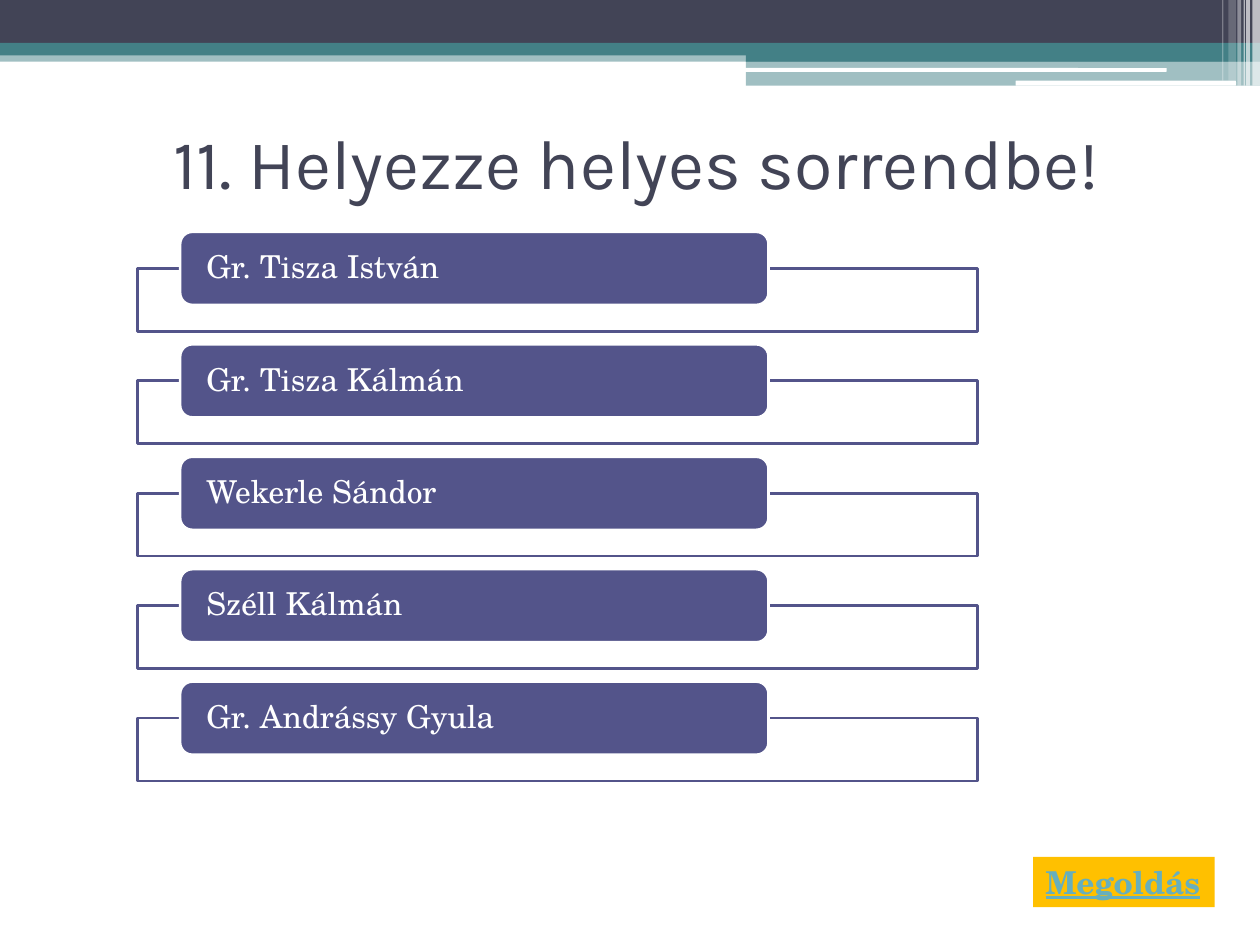
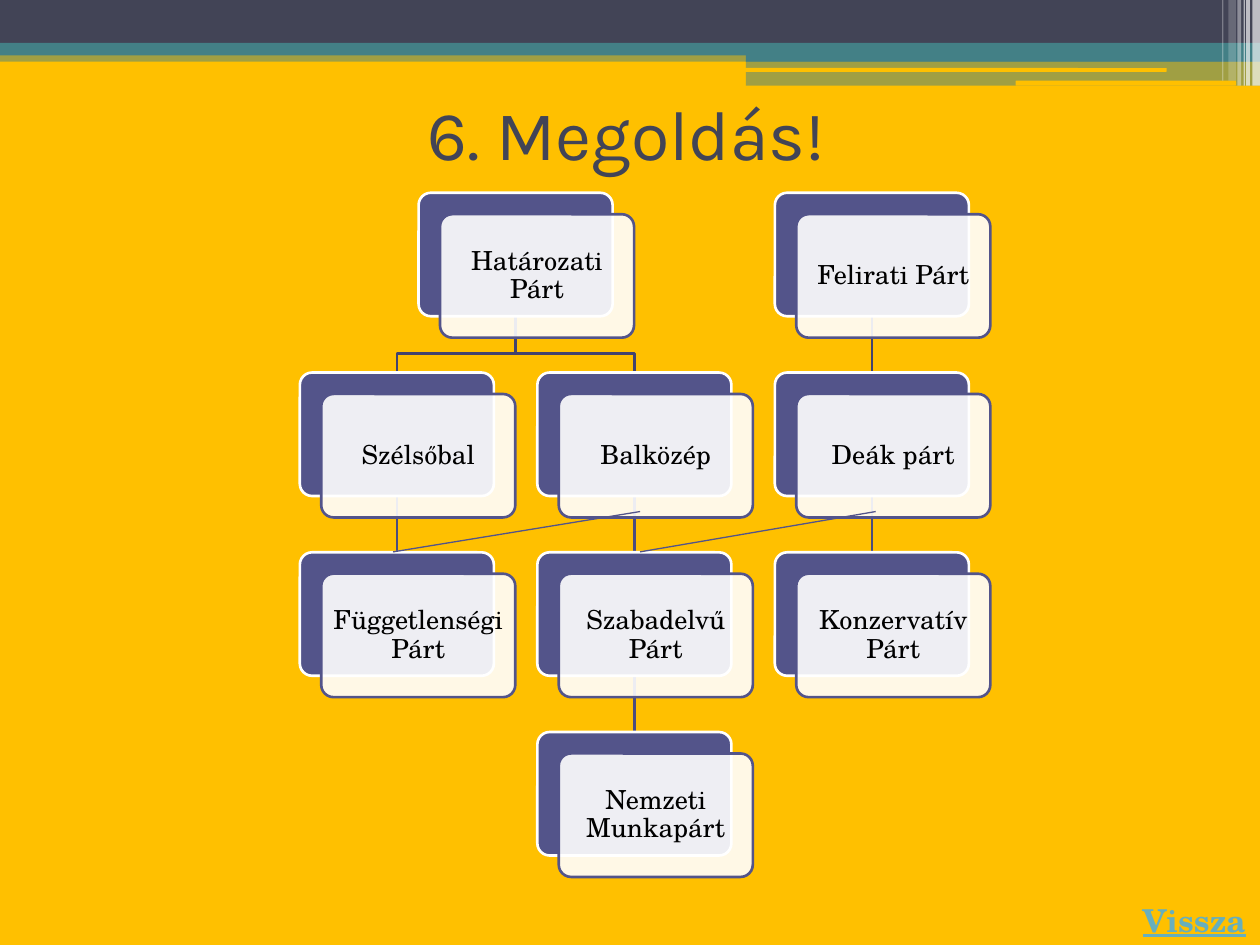
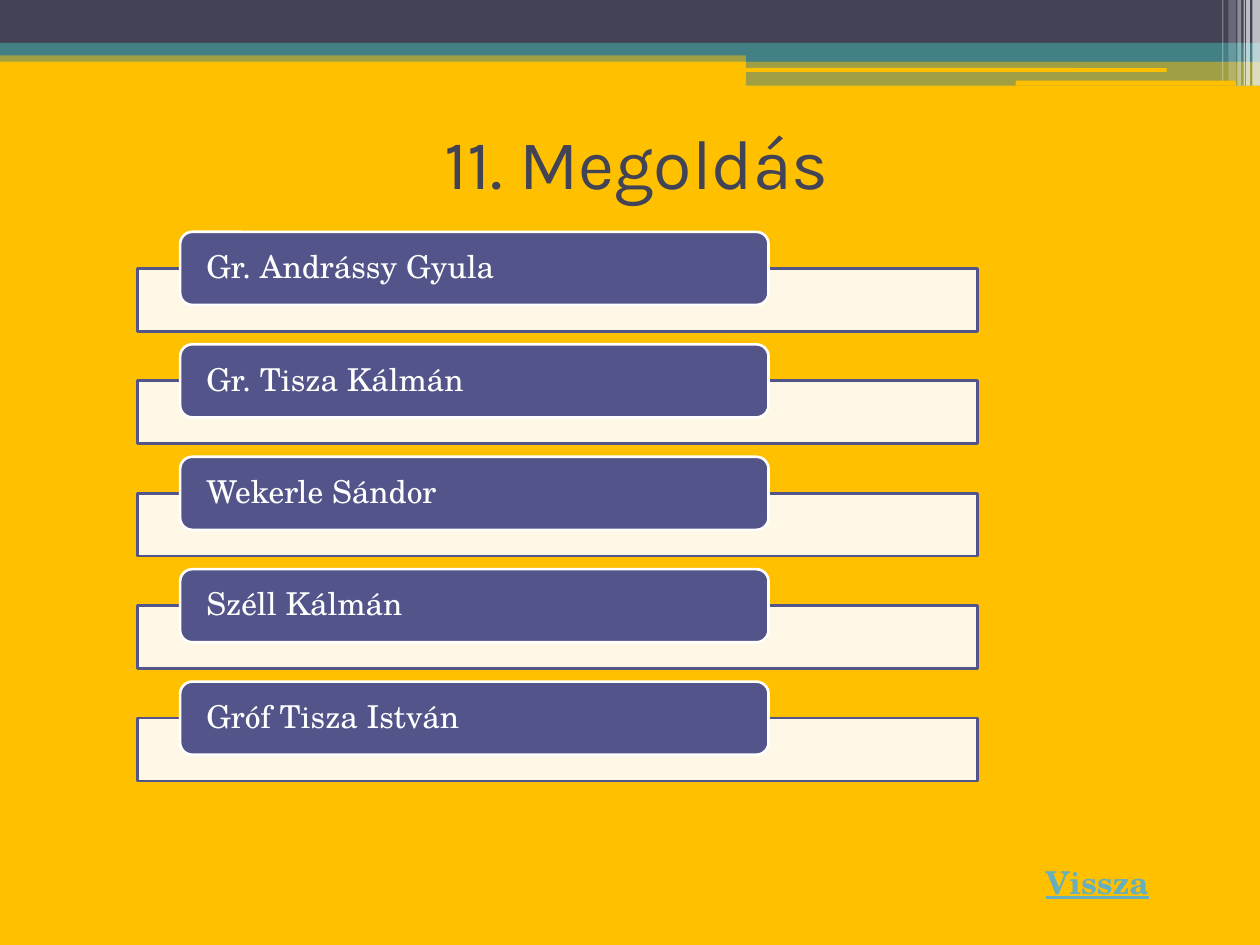
from lxml.etree import SubElement
from pptx import Presentation
from pptx.dml.color import RGBColor
from pptx.enum.shapes import MSO_CONNECTOR as Link, MSO_SHAPE as Preset
from pptx.enum.text import MSO_ANCHOR as Anchor, PP_ALIGN as Align
from pptx.oxml.ns import qn
from pptx.util import Inches, Pt

COLORS = {
    "white": "FFFFFF", "black": "000000", "gold": "FFC000", "slate": "424456",
    "teal": "438086", "indigo": "53548A", "link": "67AFBD",
    "upper branch": "42436F", "lower branch": "4B4C7D",
}
TITLE_FONT, BODY_FONT = "Karla", "TeX Gyre Schola"
COLUMNS, ROWS = 10, 7.5

# left, top, width, height, colour (None is the background), opacity in percent
BANDS = [
    (0, 0.4, 10, 0.09, "teal", 50),
    (0, 0, 10, 0.34, "slate", 100),
    (0, 0.34, 10, 0.1, "teal", 100),
    (5.92, 0.39, 4.08, 0.1, "teal", 100),
    (5.92, 0.48, 4.08, 0.2, "teal", 50),
    (5.91, 0.54, 3.35, 0.03, None, 100),
    (8.06, 0.64, 1.75, 0.04, None, 100),
]
# left, width, height, opacity of the white stripes in the corner
STRIPES = [
    (9.94, 0.06, 0.68, 65), (9.89, 0.03, 0.68, 65), (9.87, 0.01, 0.68, 60),
    (9.82, 0.03, 0.68, 40), (9.75, 0.06, 0.64, 20), (9.7, 0.01, 0.64, 30),
]

LIST_TOP, LIST_PITCH = 1.84, (5.41 - 1.84) / 4
CARD_WIDTH, CARD_HEIGHT, CARD_SHIFT = 1.54, 0.98, 0.17
TREE_LEFT, TREE_TOP = 2.38, 1.53
TREE_COLUMN, TREE_ROW = (6.15 - 2.38) / 2, (5.81 - 1.53) / 3

# party: (tree column, tree row)
PARTIES = {
    "Határozati Párt": (0.5, 0), "Szélsőbal": (0, 1),
    "Függetlenségi Párt": (0, 2), "Balközép": (1, 1),
    "Szabadelvű Párt": (1, 2), "Nemzeti Munkapárt": (1, 3),
    "Felirati Párt": (2, 0), "Deák párt": (2, 1), "Konzervatív Párt": (2, 2),
}
SUCCESSIONS = [
    ("Deák párt", "Konzervatív Párt"), ("Felirati Párt", "Deák párt"),
    ("Szabadelvű Párt", "Nemzeti Munkapárt"), ("Balközép", "Szabadelvű Párt"),
    ("Határozati Párt", "Balközép"), ("Szélsőbal", "Függetlenségi Párt"),
    ("Határozati Párt", "Szélsőbal"),
]
MERGERS = [((6.95, 4.06), (5.08, 4.38)), ((5.08, 4.06), (3.12, 4.38))]


def rgb(name):
    return RGBColor.from_string(COLORS[name])


class Painter:
    """Draws on the current page; lengths are columns and rows of the grid."""

    def __init__(self):
        self.deck = Presentation()
        self.deck.slide_width, self.deck.slide_height = Inches(10), Inches(7.5)
        self.page = None

    def x(self, columns):
        return round(self.deck.slide_width * columns / COLUMNS)

    def y(self, rows):
        return round(self.deck.slide_height * rows / ROWS)

    def frame(self, left, top, width, height):
        return self.x(left), self.y(top), self.x(width), self.y(height)

    def new_page(self, background):
        self.page = self.deck.slides.add_slide(self.deck.slide_layouts[6])
        self.page.background.fill.solid()
        self.page.background.fill.fore_color.rgb = rgb(background)
        for *place, color, opacity in BANDS:
            preset = Preset.RECTANGLE if color else Preset.ROUNDED_RECTANGLE
            self.box(place, color or background, opacity, preset=preset)
        for left, width, height, opacity in STRIPES:
            self.box((left, 0, width, height), "white", opacity)

    def box(self, place, fill, opacity=100, line=None, preset=Preset.RECTANGLE):
        box = self.page.shapes.add_shape(preset, *self.frame(*place))
        box.shadow.inherit = False
        box.fill.solid()
        box.fill.fore_color.rgb = rgb(fill)
        if opacity < 100:
            color = box.fill._xPr.find(f".//{qn('a:srgbClr')}")
            SubElement(color, qn("a:alpha"), val=str(opacity * 1000))
        if line:
            self.stroke(box, line)
        else:
            box.line.fill.background()
        return box

    def stroke(self, shape, color, width=1.5):
        shape.line.color.rgb = rgb(color)
        shape.line.width = Pt(width)

    def put_text(self, box, text, size, color, font=BODY_FONT, align=Align.LEFT,
                 anchor=Anchor.MIDDLE, insets=(0.1, 0.05), wrap=True, spacing=None):
        frame = box.text_frame
        frame.word_wrap, frame.vertical_anchor = wrap, anchor
        frame.margin_left = frame.margin_right = self.x(insets[0])
        frame.margin_top = frame.margin_bottom = self.y(insets[1])
        para = frame.paragraphs[0]
        para.text, para.alignment, para.line_spacing = text, align, spacing
        para.font.name, para.font.size = font, Pt(size)
        para.font.color.rgb = rgb(color)
        return para

    def title(self, text, left=0.55, top=0.7):
        box = self.page.shapes.add_textbox(*self.frame(left, top, 9, 1.17))
        self.put_text(box, text, 40, "slate", TITLE_FONT, Align.CENTER)

    def jump_label(self, text, left, top, width, fill=None):
        """Underlined label in the lower right corner."""
        place = (left, top, width, 0.4)
        if fill:
            box = self.box(place, fill)
        else:
            box = self.page.shapes.add_textbox(*self.frame(*place))
        para = self.put_text(box, text, 18, "link", anchor=Anchor.TOP, wrap=False)
        para.font.bold = para.font.underline = True

    def name_list(self, names):
        for index, name in enumerate(names):
            top = LIST_TOP + index * LIST_PITCH
            self.box((1.09, top + 0.29, 6.67, 0.5), "white", 90, "indigo")
            pill = self.box((1.43, top, 4.67, 0.58), "indigo", line="white",
                            preset=Preset.ROUNDED_RECTANGLE)
            self.put_text(pill, name, 18, "white", insets=(0.18, 0), spacing=0.9)

    def card(self, text, column, row):
        """Draws a white card over an indigo one and returns the indigo one."""
        left, top = TREE_LEFT + column * TREE_COLUMN, TREE_TOP + row * TREE_ROW
        back, front = [
            self.box((left + shift, top + shift, CARD_WIDTH, CARD_HEIGHT),
                     fill, opacity, line, Preset.ROUNDED_RECTANGLE)
            for shift, fill, opacity, line in (
                (0, "indigo", 100, "white"), (CARD_SHIFT, "white", 90, "indigo"))
        ]
        back.adjustments[0] = front.adjustments[0] = 0.1
        self.put_text(front, text, 15, "black", align=Align.CENTER,
                      insets=(0.06, 0.06), spacing=0.9)
        return back

    def line(self, start, end, color, width):
        link = self.page.shapes.add_connector(
            Link.STRAIGHT, self.x(start[0]), self.y(start[1]),
            self.x(end[0]), self.y(end[1]))
        self.stroke(link, color, width)
        SubElement(link._element.spPr, qn("a:effectLst"))
        return link

    def branch(self, parent, child, color):
        """Joins two cards, with a bend where they are not in one column."""
        start_x, end_x = (card.left + card.width // 2 for card in (parent, child))
        start_y, end_y = parent.top + parent.height, child.top
        if abs(start_x - end_x) < self.x(0.01):
            link = self.line((0, 0), (0, 0), color, 1.5)
            link.begin_connect(parent, 2)
            link.end_connect(child, 0)
            return link
        bend_y = start_y + (end_y - start_y) * 2 // 3
        outline = self.page.shapes.build_freeform(start_x, start_y)
        outline.add_line_segments(
            [(start_x, bend_y), (end_x, bend_y), (end_x, end_y)], close=False)
        link = outline.convert_to_shape()
        link.shadow.inherit = False
        link.fill.background()
        self.stroke(link, color)
        return link

    def party_tree(self):
        cards = {name: self.card(name, *cell) for name, cell in PARTIES.items()}
        rearmost = next(iter(cards.values()))
        for parent, child in SUCCESSIONS:
            level = "upper" if PARTIES[parent][1] == 0 else "lower"
            link = self.branch(cards[parent], cards[child], f"{level} branch")
            rearmost._element.addprevious(link._element)
        for start, end in MERGERS:
            self.line(start, end, "indigo", 0.75)


def main():
    painter = Painter()

    painter.new_page("white")
    painter.title("11. Helyezze helyes sorrendbe!")
    painter.jump_label("Megoldás", 8.2, 6.8, 1.44, "gold")
    painter.name_list(["Gr. Tisza István", "Gr. Tisza Kálmán", "Wekerle Sándor",
                       "Széll Kálmán", "Gr. Andrássy Gyula"])

    painter.new_page("gold")
    painter.title("6. Megoldás!", 0.47, 0.47)
    painter.jump_label("Vissza", 8.97, 7.1, 1.03)
    painter.party_tree()

    painter.new_page("gold")
    painter.title("11. Megoldás")
    painter.jump_label("Vissza", 8.2, 6.8, 1.03)
    painter.name_list(["Gr. Andrássy Gyula", "Gr. Tisza Kálmán", "Wekerle Sándor",
                       "Széll Kálmán", "Gróf Tisza István"])

    painter.deck.save("out.pptx")


if __name__ == "__main__":
    main()
